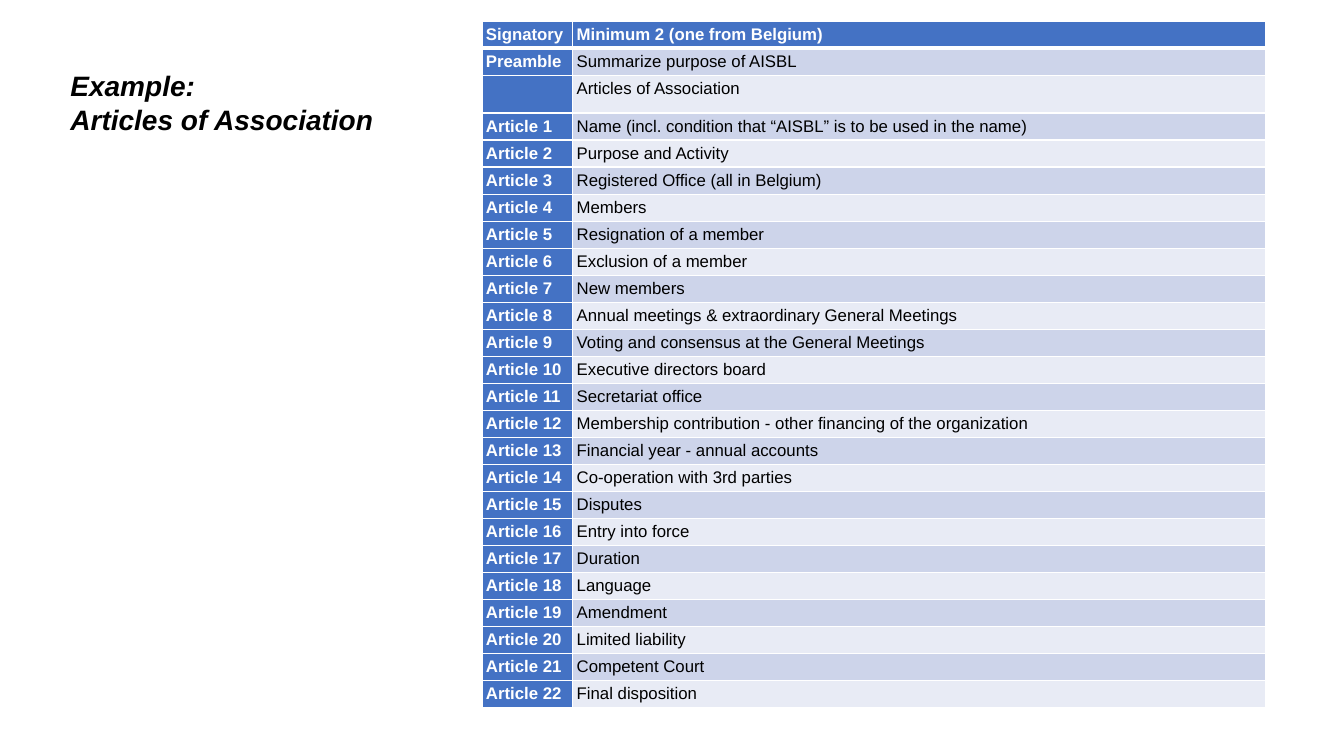
from dataclasses import dataclass

from lxml.etree import SubElement
from pptx import Presentation
from pptx.dml.color import RGBColor
from pptx.oxml.ns import qn
from pptx.util import Inches, Pt

WHITE, BLACK, BLUE = "FFFFFF", "000000", "4472C4"
BANDS = ("CDD4EA", "E8EBF5")
TABLE_LEFT, TABLE_TOP, TABLE_HEIGHT = 4.78, 0.21, 6.8
COLUMN_WIDTHS = (0.9, 6.87)
SUBHEADING_ROW, SUBHEADING_HEIGHT = 2, 0.36

ARTICLES = (
    "Name (incl. condition that “AISBL” is to be used in the name)",
    "Purpose and Activity",
    "Registered Office (all in Belgium)",
    "Members",
    "Resignation of a member",
    "Exclusion of a member",
    "New members",
    "Annual meetings & extraordinary General Meetings",
    "Voting and consensus at the General Meetings",
    "Executive directors board",
    "Secretariat office",
    "Membership contribution - other financing of the organization",
    "Financial year - annual accounts",
    "Co-operation with 3rd parties",
    "Disputes",
    "Entry into force",
    "Duration",
    "Language",
    "Amendment",
    "Limited liability",
    "Competent Court",
    "Final disposition",
)


@dataclass(frozen=True)
class Entry:
    label: str
    content: str


ENTRIES = [
    Entry("Signatory", "Minimum 2 (one from Belgium)"),
    Entry("Preamble", "Summarize purpose of AISBL"),
    Entry("", "Articles of Association"),
    *(Entry(f"Article {number}", content)
      for number, content in enumerate(ARTICLES, start=1)),
]


def rgb(color: str) -> RGBColor:
    return RGBColor.from_string(color)


def write_text(frame, text: str, *, size: float, color: str = BLACK,
               bold: bool = False, italic: bool = False) -> None:
    """Put each line of text in a paragraph of its own."""
    for index, line in enumerate(text.split("\n")):
        paragraph = frame.add_paragraph() if index else frame.paragraphs[0]
        run = paragraph.add_run()
        run.text = line
        font = run.font
        font.name, font.size = "Arial", Pt(size)
        font.bold, font.italic = bold, italic
        font.color.rgb = rgb(color)


def add_borders(cell, *, top: float, bottom: float) -> None:
    """Draw white cell borders; top and bottom widths are in points."""
    properties = cell._tc.get_or_add_tcPr()
    for side, width in (("L", 1), ("R", 1), ("T", top), ("B", bottom)):
        line = SubElement(properties, qn(f"a:ln{side}"), w=str(Pt(width)))
        fill = SubElement(line, qn("a:solidFill"))
        SubElement(fill, qn("a:srgbClr"), val=WHITE)


def fill_cell(cell, text: str, row: int, column: int) -> None:
    emphasized = row == 0 or column == 0
    add_borders(cell, top=3 if row == 1 else 1, bottom=3 if row == 0 else 1)
    cell.fill.solid()
    cell.fill.fore_color.rgb = rgb(BLUE if emphasized else BANDS[(row - 1) % 2])
    cell.margin_left = cell.margin_right = cell.margin_top = Inches(0.04)
    cell.margin_bottom = Inches(0.03)
    if text:
        write_text(cell.text_frame, text, size=12, bold=emphasized,
                   color=WHITE if emphasized else BLACK)


def add_articles_table(slide) -> None:
    table = slide.shapes.add_table(
        len(ENTRIES), len(COLUMN_WIDTHS), Inches(TABLE_LEFT), Inches(TABLE_TOP),
        Inches(sum(COLUMN_WIDTHS)), Inches(TABLE_HEIGHT)).table
    for column, width in zip(table.columns, COLUMN_WIDTHS):
        column.width = Inches(width)
    row_height = (TABLE_HEIGHT - SUBHEADING_HEIGHT) / (len(ENTRIES) - 1)
    for row, entry in enumerate(ENTRIES):
        height = SUBHEADING_HEIGHT if row == SUBHEADING_ROW else row_height
        table.rows[row].height = Inches(height)
        for column, text in enumerate((entry.label, entry.content)):
            fill_cell(table.cell(row, column), text, row, column)


def add_title(slide) -> None:
    title = slide.shapes.add_textbox(
        Inches(0.6), Inches(0.63), Inches(3.24), Inches(0.77))
    title.text_frame.word_wrap = True
    write_text(title.text_frame, "Example:\nArticles of Association",
               size=20, bold=True, italic=True)


def main() -> None:
    presentation = Presentation()
    presentation.slide_width = Inches(13.33)
    presentation.slide_height = Inches(7.5)
    slide = presentation.slides.add_slide(presentation.slide_layouts[6])
    add_articles_table(slide)
    add_title(slide)
    presentation.save("out.pptx")


if __name__ == "__main__":
    main()
